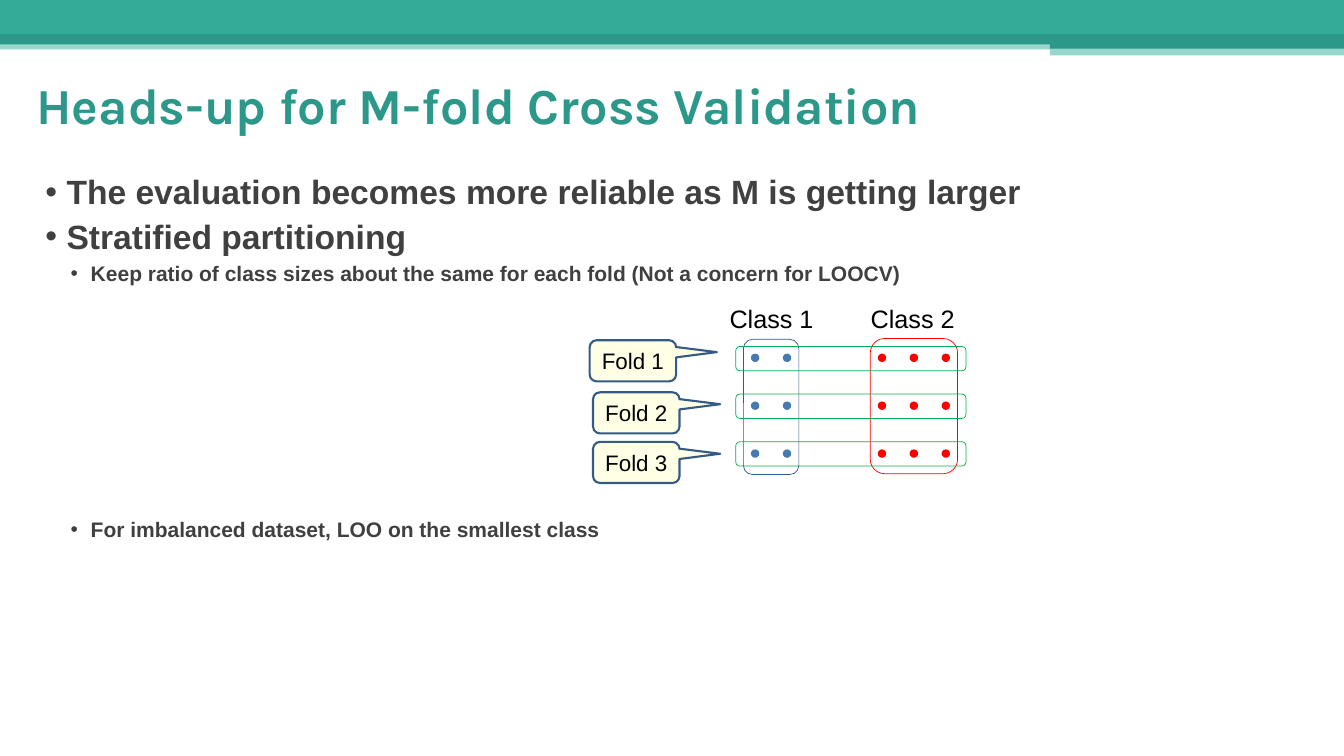
import pptx
import pptx.dml.color
import pptx.enum.shapes
import pptx.enum.text
import pptx.util
from lxml import etree

RGB = pptx.dml.color.RGBColor
KIND = pptx.enum.shapes.MSO_SHAPE
ALIGN = pptx.enum.text.PP_ALIGN
ANCHOR = pptx.enum.text.MSO_ANCHOR
Pt = pptx.util.Pt

TEAL = RGB(0x32, 0xAB, 0x99)
DEEP = RGB(0x2C, 0x98, 0x89)
PALE = RGB(0x98, 0xD5, 0xCC)
GREY = RGB(0x40, 0x40, 0x40)
BLACK = RGB(0, 0, 0)
BLUE = RGB(0x47, 0x7A, 0xB1)
NAVY = RGB(0x35, 0x5A, 0x83)
RED = RGB(0xFF, 0, 0)
GREEN = RGB(0, 0xB0, 0x50)
CREAM = RGB(0xFF, 0xFF, 0xE5)

COLS, ROWS = 160, 90


def write(para, text, font="Arial", size=18, color=BLACK, bold=False,
          align=ALIGN.LEFT, before=0):
    para.alignment = align
    para.space_before = Pt(before)
    run = para.add_run()
    run.text = text
    run.font.name = font
    run.font.size = Pt(size)
    run.font.bold = bold
    run.font.color.rgb = color


class Board:
    """Place styled elements on one slide by grid columns and rows."""

    def __init__(self):
        self.deck = pptx.Presentation()
        self.deck.slide_width = pptx.util.Inches(13.33)
        self.deck.slide_height = pptx.util.Inches(7.5)
        self.slide = self.deck.slides.add_slide(self.deck.slide_layouts[1])

    def grid(self, x, y, w, h):
        col = self.deck.slide_width / COLS
        row = self.deck.slide_height / ROWS
        return [round(n) for n in (x * col, y * row, w * col, h * row)]

    def shape(self, kind, box, fill=None, line=None, width=0.5):
        item = self.slide.shapes.add_shape(kind, *self.grid(*box))
        item.shadow.inherit = False
        if fill is None:
            item.fill.background()
        else:
            item.fill.solid()
            item.fill.fore_color.rgb = fill
        if line is None:
            item.line.fill.background()
        else:
            item.line.color.rgb = line
            item.line.width = Pt(width)
        return item

    def holder(self, item, box, anchor):
        item.left, item.top, item.width, item.height = self.grid(*box)
        frame = item.text_frame
        frame.auto_size = pptx.enum.text.MSO_AUTO_SIZE.NONE
        frame.vertical_anchor = anchor
        return frame

    def title(self, text, box):
        frame = self.holder(self.slide.shapes.title, box, ANCHOR.MIDDLE)
        write(frame.paragraphs[0], text, font="Karla", size=36, color=DEEP, bold=True)

    def points(self, rows, box):
        frame = self.holder(self.slide.placeholders[1], box, ANCHOR.TOP)
        for num, (level, before, text) in enumerate(rows):
            para = frame.add_paragraph() if num else frame.paragraphs[0]
            para.level = level
            write(para, text, size=(24, 15)[level], color=GREY, bold=True, before=before)
            self.bullet(para, *((0.3, -0.21), (0.54, -0.2))[level])

    def bullet(self, para, left, hang):
        props = para._p.get_or_add_pPr()
        props.set("marL", str(pptx.util.Inches(left)))
        props.set("indent", str(pptx.util.Inches(hang)))
        for tag, key, value in (("buFont", "typeface", "Arial"), ("buChar", "char", "•")):
            etree.SubElement(props, pptx.oxml.ns.qn("a:" + tag)).set(key, value)

    def label(self, text, box):
        frame = self.slide.shapes.add_textbox(*self.grid(*box)).text_frame
        frame.word_wrap = False
        write(frame.paragraphs[0], text, align=ALIGN.CENTER)

    def callout(self, text, box):
        item = self.shape(KIND.ROUNDED_RECTANGULAR_CALLOUT, box, CREAM, NAVY, 1.5)
        for num, value in enumerate((0.97, -0.21, 0.17)):
            item.adjustments[num] = value
        frame = item.text_frame
        frame.word_wrap = False
        frame.vertical_anchor = ANCHOR.MIDDLE
        write(frame.paragraphs[0], text, size=16, align=ALIGN.CENTER)


def main():
    board = Board()
    for box, color in (
        ((0, 4.8, 160, 1.08), PALE),
        ((0, 0, 160, 4.08), TEAL),
        ((0, 4.08, 160, 1.2), DEEP),
        ((125, 4.7, 35, 1.2), DEEP),
        ((125, 5.8, 35, 0.8), PALE),
    ):
        board.shape(KIND.RECTANGLE, box, color)

    board.title("Heads-up for M-fold Cross Validation", (3.12, 7.32, 153.7, 10.32))
    board.points((
        (0, 0, "The evaluation becomes more reliable as M is getting larger"),
        (0, 3, "Stratified partitioning"),
        (1, 3, "Keep ratio of class sizes about the same for each fold (Not a concern for LOOCV)"),
        (1, 165, "For imbalanced dataset, LOO on the smallest class"),
    ), (3.12, 19.8, 153.7, 65.8))

    for left, count, color in ((89.4, 2, BLUE), (104.5, 3, RED)):
        for row in range(3):
            for col in range(count):
                spot = (left + 3.8 * col, 42.1 + 5.7 * row, 1, 1)
                board.shape(KIND.OVAL, spot, color)

    board.shape(KIND.ROUNDED_RECTANGLE, (88.5, 40.4, 6.6, 16.1), line=NAVY)
    board.shape(KIND.ROUNDED_RECTANGLE, (103.6, 40.3, 10.4, 16.1), line=RED)
    for row in range(3):
        board.shape(KIND.ROUNDED_RECTANGLE, (87.6, 41.25 + 5.67 * row, 27.4, 2.9), line=GREEN)

    for num, left in enumerate((85.6, 102.4), 1):
        board.label(f"Class {num}", (left, 35.5, 12.5, 4.8))
    for num, (left, top) in enumerate(((70.2, 40.5), (70.6, 46.7), (70.6, 52.6)), 1):
        board.callout(f"Fold {num}", (left, top, 10.3, 4.9))

    board.deck.save("out.pptx")


if __name__ == "__main__":
    main()
